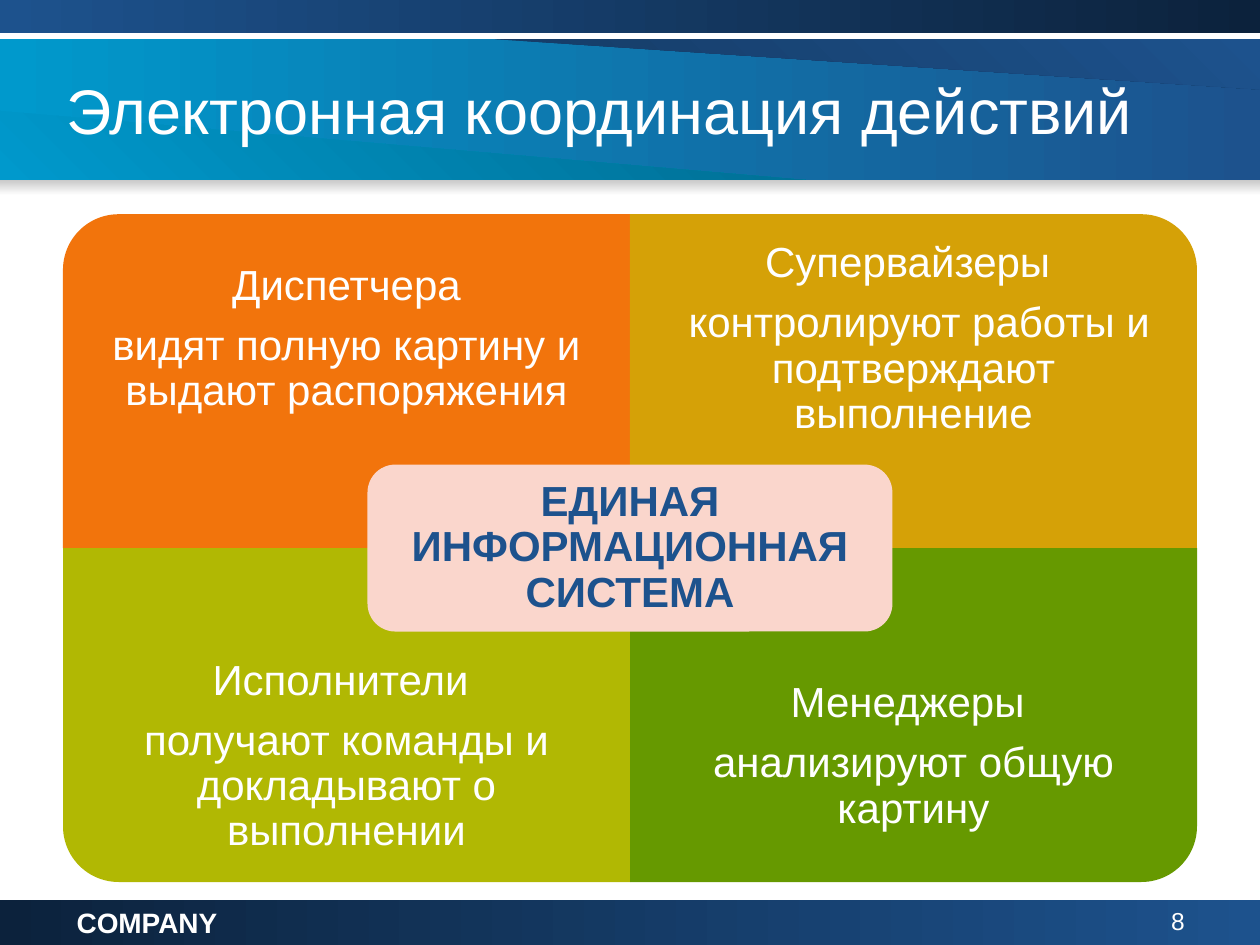
"""Build the slide on electronic coordination of actions."""
from dataclasses import dataclass

from pptx import Presentation
from pptx import util as u
from pptx.dml.color import RGBColor
from pptx.enum import shapes, text

Pt = u.Pt
KIND = shapes.MSO_SHAPE
ALIGN = text.PP_ALIGN
ANCHOR = text.MSO_ANCHOR


@dataclass(frozen=True)
class Theme:
    """Hold the colours and type sizes of the slide."""
    font: str = "Arial"
    white: str = "FFFFFF"
    blue: str = "1D528D"
    navy: str = "153B65"
    night: str = "0C223C"
    sky: str = "0099CC"
    teal: str = "006D92"
    shade: str = "CACACA"
    orange: str = "F2740C"
    gold: str = "D5A107"
    lime: str = "B1B803"
    green: str = "669900"
    rose: str = "FAD6CC"
    title: int = 36
    body: int = 24
    brand: int = 16
    number: int = 14


T = Theme()


def paint(shape, *hues, angle=0):
    """Fill a shape with one hue or a two-hue gradient, without an outline."""
    shape.shadow.inherit = False
    shape.line.fill.background()
    if len(hues) == 1:
        shape.fill.solid()
        shape.fill.fore_color.rgb = RGBColor.from_string(hues[0])
        return
    shape.fill.gradient()
    shape.fill.gradient_angle = angle
    for stop, hue in zip(shape.fill.gradient_stops, hues):
        stop.color.rgb = RGBColor.from_string(hue)


def block(slide, kind, box, *hues, angle=0):
    """Add a painted preset shape."""
    shape = slide.shapes.add_shape(kind, *map(Pt, box))
    paint(shape, *hues, angle=angle)
    return shape


def wedge(slide, box, points, *hues):
    """Add a painted outline whose points are relative to the box."""
    left, top = box[:2]
    spots = [(Pt(left + x), Pt(top + y)) for x, y in points]
    form = slide.shapes.build_freeform(*spots[0])
    form.add_line_segments(spots[1:], close=True)
    paint(form.convert_to_shape(), *hues, angle=45)


def write(shape, words, size, hue, bold=False, align=ALIGN.LEFT,
          anchor=ANCHOR.TOP, inset=None, tight=False):
    """Set the text of a shape and format its runs."""
    frame = shape.text_frame
    frame.text = words
    frame.word_wrap = True
    frame.vertical_anchor = anchor
    if inset is not None:
        frame.margin_left = frame.margin_right = Pt(inset)
        frame.margin_top = frame.margin_bottom = Pt(inset)
    for line in frame.paragraphs:
        line.alignment = align
        if tight:
            line.line_spacing = 0.9
            line.space_after = Pt(0.35 * size)
        for run in line.runs:
            run.font.name = T.font
            run.font.size = Pt(size)
            run.font.bold = bold
            run.font.color.rgb = RGBColor.from_string(hue)


def label(slide, box, *args, **style):
    """Add a text box with formatted words."""
    write(slide.shapes.add_textbox(*map(Pt, box)), *args, **style)


def header(slide, box, title):
    """Draw the top strip, the title band with its wedges and its shade."""
    left, top, width, height = box
    band = top + 22.4
    base = top + height - 8.6
    deep = base - band
    block(slide, KIND.RECTANGLE, (left, band, width, deep), T.sky, T.blue)
    wedge(slide, (left, band),
          [(283, 0), (width, 0), (width, 28.8)], T.navy, T.blue)
    wedge(slide, (left, base),
          [(0, -39.6), (462, 0), (0, 0)], T.sky, T.teal)
    block(slide, KIND.RECTANGLE, (left, top, width, 18.7), T.blue, T.night)
    block(slide, KIND.RECTANGLE, (left, base, width, 8.6),
          T.shade, T.white, angle=270)
    label(slide, (left + 31, band, 652, 80), title, T.title, T.white,
          anchor=ANCHOR.MIDDLE)


def quarter(slide, box, turn, hue, words, low):
    """Draw one quarter, its round corner turned outward, with its text."""
    left, top, width, height = box
    wide, high = (height, width) if turn % 180 else (width, height)
    shape = block(slide, KIND.ROUND_1_RECTANGLE,
                  (left + (width - wide) / 2, top + (height - high) / 2,
                   wide, high), hue)
    shape.rotation = turn
    area = 0.75 * height
    label(slide, (left, top + low * (height - area), width, area), words,
          T.body, T.white, align=ALIGN.CENTER, anchor=ANCHOR.MIDDLE,
          inset=13.4, tight=True)


def matrix(slide, box, parts, core):
    """Draw four quarters and the core on their common corner."""
    left, top, width, height = box
    wide, high = width / 2, height / 2
    for index, (turn, hue, words) in enumerate(parts):
        row, col = divmod(index, 2)
        quarter(slide, (left + col * wide, top + row * high, wide, high),
                turn, hue, words, row)
    span, rise = 300, high / 2
    shape = block(slide, KIND.ROUNDED_RECTANGLE,
                  (left + wide - span / 2, top + high - rise / 2, span, rise),
                  T.rose)
    write(shape, core, T.body, T.blue, bold=True, align=ALIGN.CENTER,
          anchor=ANCHOR.MIDDLE, inset=7.2, tight=True)


def footer(slide, box, brand, number):
    """Draw the bottom strip with the brand and the slide number."""
    left, top, width, height = box
    block(slide, KIND.RECTANGLE, box, T.night, T.blue)
    label(slide, (left + width - 204, top, 168, 19.4), number, T.number,
          T.white, align=ALIGN.RIGHT)
    label(slide, (left + 36.7, top, 228, 19.4), brand, T.brand, T.white,
          bold=True)


def main():
    """Build and save the slide."""
    deck = Presentation()
    deck.slide_width, deck.slide_height = Pt(720), Pt(540)
    slide = deck.slides.add_slide(deck.slide_layouts[6])
    parts = [
        (270, T.orange,
         "Диспетчера\nвидят полную картину и выдают распоряжения"),
        (0, T.gold,
         "Супервайзеры \n контролируют работы и подтверждают выполнение"),
        (180, T.lime,
         "Исполнители \nполучают команды и докладывают о выполнении"),
        (90, T.green, "Менеджеры \nанализируют общую картину"),
    ]
    header(slide, (0, 0, 720, 111.6), "Электронная координация действий")
    matrix(slide, (36, 122.4, 648, 381.6), parts,
           "ЕДИНАЯ ИНФОРМАЦИОННАЯ СИСТЕМА")
    footer(slide, (0, 514, 720, 26), "COMPANY", "8")
    deck.save("out.pptx")


if __name__ == "__main__":
    main()
